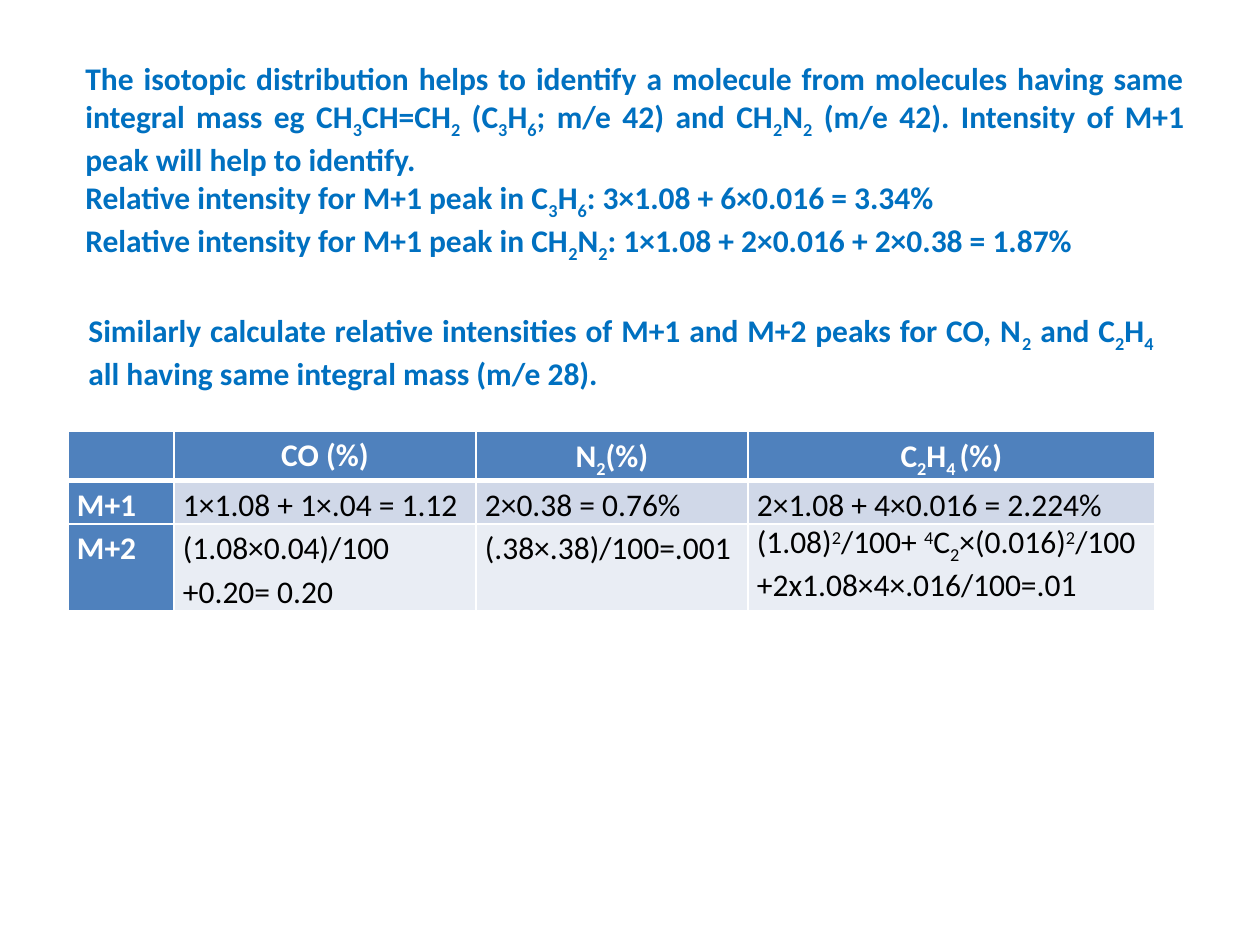
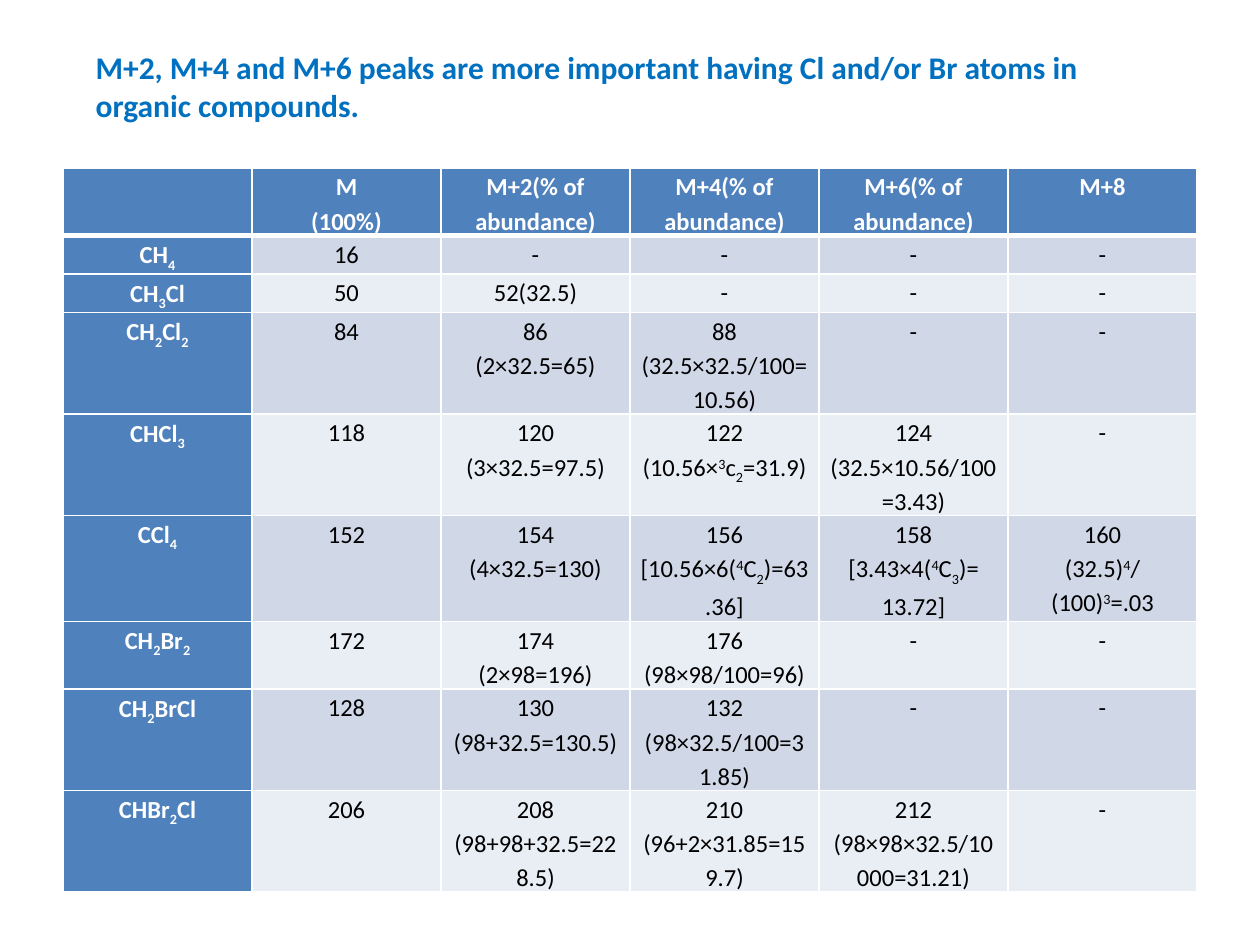
from dataclasses import dataclass

from lxml.etree import SubElement
from pptx import Presentation
from pptx.dml.color import RGBColor
from pptx.enum.text import MSO_ANCHOR, MSO_AUTO_SIZE, PP_ALIGN
from pptx.oxml.ns import qn
from pptx.shapes.base import BaseShape
from pptx.slide import Slide
from pptx.table import Table, _Cell
from pptx.text.text import TextFrame
from pptx.util import Emu, Pt


@dataclass(frozen=True)
class Theme:
    font: str = "Calibri"
    blue: str = "0070C0"
    head: str = "4F81BD"
    bands: tuple[str, str] = ("D0D8E8", "E9EDF4")
    white: str = "FFFFFF"
    black: str = "000000"
    large: int = 18
    small: int = 14
    thin: int = 1
    thick: int = 3


@dataclass(frozen=True)
class Box:
    left: int
    top: int
    width: int
    height: int


@dataclass(frozen=True)
class Style:
    size: int
    color: str
    bold: bool
    align: PP_ALIGN
    spacing: float = 1.0


@dataclass(frozen=True)
class Grid:
    box: Box
    widths: list[int]
    lines: list[int]  # text lines in each row
    rows: list[list[str]]
    size: int
    align: PP_ALIGN


THEME = Theme()
SHIFTS = {"_": "-25000", "^": "30000"}
PROSE = Style(THEME.large, THEME.blue, True, PP_ALIGN.JUSTIFY)
TITLE = Style(THEME.large, THEME.blue, True, PP_ALIGN.LEFT)


def px(value: float) -> Emu:
    return Emu(round(value * 914400 / 126))


def split(line: str) -> list[tuple[str, str]]:
    """Cut a line into (mark, text); _ lowers and ^ raises the next letter."""
    parts, mark = [], ""
    for char in line:
        if char in SHIFTS:
            mark = char
        elif mark or not parts or parts[-1][0]:
            parts.append((mark, char))
            mark = ""
        else:
            parts[-1] = ("", parts[-1][1] + char)
    return parts


def write(frame: TextFrame, text: str, style: Style) -> None:
    for index, line in enumerate(text.split("\n")):
        para = frame.add_paragraph() if index else frame.paragraphs[0]
        para.alignment = style.align
        para.line_spacing = style.spacing
        para.font.size = Pt(style.size)
        for mark, part in split(line):
            run = para.add_run()
            run.text = part
            font = run.font
            font.name, font.size, font.bold = THEME.font, Pt(style.size), style.bold
            font.color.rgb = RGBColor.from_string(style.color)
            if mark:
                run._r.get_or_add_rPr().set("baseline", SHIFTS[mark])


def place(shape: BaseShape, box: Box, text: str, style: Style) -> None:
    shape.left, shape.top = px(box.left), px(box.top)
    shape.width, shape.height = px(box.width), px(box.height)
    frame = shape.text_frame
    frame.word_wrap = True
    frame.vertical_anchor = MSO_ANCHOR.TOP
    frame.auto_size = MSO_AUTO_SIZE.SHAPE_TO_FIT_TEXT
    write(frame, text, style)


def add_text(slide: Slide, box: Box, text: str) -> None:
    place(slide.shapes.add_textbox(0, 0, 0, 0), box, text, PROSE)


def paint(cell: _Cell, fill: str, row: int) -> None:
    """Give a cell its margins, white borders and fill."""
    cell.margin_left = cell.margin_right = px(9)
    cell.margin_top = cell.margin_bottom = 0
    props = cell._tc.get_or_add_tcPr()
    for side in ("lnL", "lnR", "lnT", "lnB"):
        heavy = (row, side) in ((0, "lnB"), (1, "lnT"))
        width = THEME.thick if heavy else THEME.thin
        line = SubElement(props, qn(f"a:{side}"), w=str(Pt(width)))
        SubElement(SubElement(line, qn("a:solidFill")), qn("a:srgbClr"), val=THEME.white)
    cell.fill.solid()
    cell.fill.fore_color.rgb = RGBColor.from_string(fill)


def add_grid(slide: Slide, grid: Grid) -> Table:
    box = grid.box
    table = slide.shapes.add_table(
        len(grid.rows), len(grid.widths),
        px(box.left), px(box.top), px(box.width), px(box.height),
    ).table
    table.first_col = True
    for column, width in zip(table.columns, grid.widths):
        column.width = px(width)
    unit = box.height / sum(grid.lines)
    for row, count in zip(table.rows, grid.lines):
        row.height = px(unit * count)
    for r, texts in enumerate(grid.rows):
        for c, text in enumerate(texts):
            head = r == 0 or c == 0
            style = Style(
                grid.size, THEME.white if head else THEME.black, head,
                grid.align if r else PP_ALIGN.CENTER, 1.15,
            )
            cell = table.cell(r, c)
            paint(cell, THEME.head if head else THEME.bands[(r - 1) % 2], r)
            write(cell.text_frame, text, style)
    return table


# Slide content
ISOTOPES = (
    "The isotopic distribution helps to identify a molecule from molecules having same "
    "integral mass eg CH_3CH=CH_2 (C_3H_6; m/e 42) and CH_2N_2 (m/e 42). "
    "Intensity of M+1 peak will help to identify.\n"
    "Relative intensity for M+1 peak in C_3H_6: 3×1.08 + 6×0.016 = 3.34%\n"
    "Relative intensity for M+1 peak in CH_2N_2: 1×1.08 + 2×0.016 + 2×0.38 = 1.87%"
)
TASK = (
    "Similarly calculate relative intensities of M+1 and M+2 peaks for CO, N_2 and "
    "C_2H_4 all having same integral mass (m/e 28)."
)
HALOGENS = (
    "M+2, M+4 and M+6 peaks are more important having Cl and/or Br atoms in "
    "organic compounds."
)
GASES = Grid(
    Box(68, 431, 1087, 174), [106, 302, 272, 407], [1, 1, 2],
    [
        ["", "CO (%)", "N_2(%)", "C_2H_4_ (%)"],
        ["M+1", "1×1.08 + 1×.04 = 1.12", "2×0.38 = 0.76%", "2×1.08 + 4×0.016 = 2.224%"],
        ["M+2", "(1.08×0.04)/100 +0.20= 0.20 ", "(.38×.38)/100=.001",
         "(1.08)^2/100+ ^4C_2×(0.016)^2/100\n+2x1.08×4×.016/100=.01"],
    ],
    THEME.large, PP_ALIGN.JUSTIFY,
)
HALIDES = Grid(
    Box(63, 168, 1134, 709), [189] * 6, [2, 1, 1, 3, 3, 3, 2, 3, 3],
    [
        ["", "M\n(100%)", *(f"M+{n}(% of abundance)" for n in (2, 4, 6)), "M+8"],
        ["CH_4", "16", "-", "-", "-", "-"],
        ["CH_3Cl", "50", "52(32.5)", "-", "-", "-"],
        ["CH_2Cl_2", "84", "86\n(2×32.5=65)", "88\n(32.5×32.5/100=10.56)", "-", "-"],
        ["CHCl_3", "118", "120\n(3×32.5=97.5)", "122\n(10.56×^3c_2=31.9)",
         "124\n(32.5×10.56/100=3.43)", "-"],
        ["CCl_4", "152", "154\n(4×32.5=130)", "156\n[10.56×6(^4C_2)=63.36]",
         "158\n[3.43×4(^4C_3)= 13.72]", "160\n(32.5)^4/\n(100)^3=.03"],
        ["CH_2Br_2", "172", "174\n(2×98=196)", "176 (98×98/100=96)", "-", "-"],
        ["CH_2BrCl", "128", "130 (98+32.5=130.5)", "132\n(98×32.5/100=31.85)", "-", "-"],
        ["CHBr_2Cl", "206", "208\n(98+98+32.5=228.5)", "210\n(96+2×31.85=159.7)",
         "212\n(98×98×32.5/10000=31.21)", "-"],
    ],
    THEME.small, PP_ALIGN.CENTER,
)


def main() -> None:
    deck = Presentation()
    deck.slide_width, deck.slide_height = px(1260), px(945)
    titled, blank = deck.slide_layouts[5], deck.slide_layouts[6]

    # Relative intensities
    slide = deck.slides.add_slide(blank)
    add_text(slide, Box(73, 53, 1124, 204), ISOTOPES)
    add_text(slide, Box(76, 305, 1090, 89), TASK)
    table = add_grid(slide, GASES)
    for para in table.cell(2, 3).text_frame.paragraphs:
        para.alignment, para.line_spacing = PP_ALIGN.LEFT, 1.0

    # Chlorine and bromine compounds
    slide = deck.slides.add_slide(titled)
    place(slide.shapes.title, Box(83, 42, 1092, 89), HALOGENS, TITLE)
    add_grid(slide, HALIDES)

    deck.save("out.pptx")


if __name__ == "__main__":
    main()
